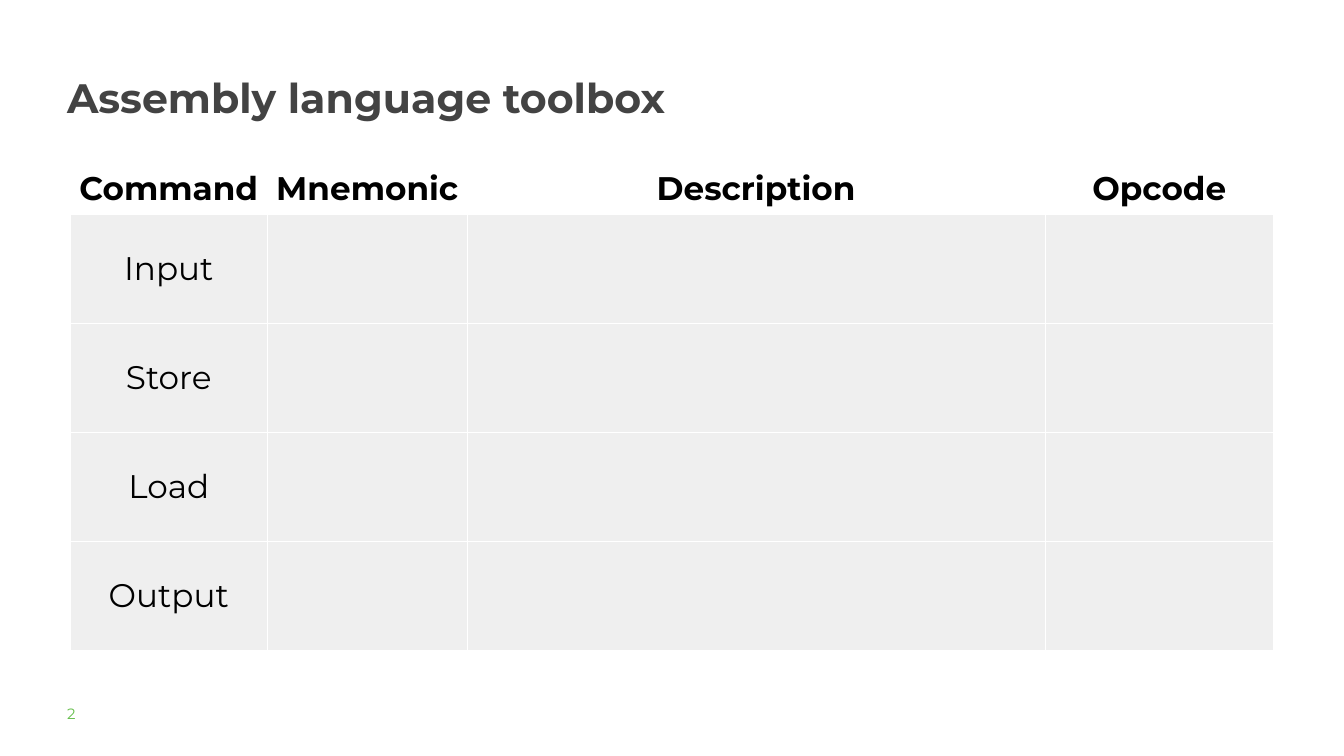
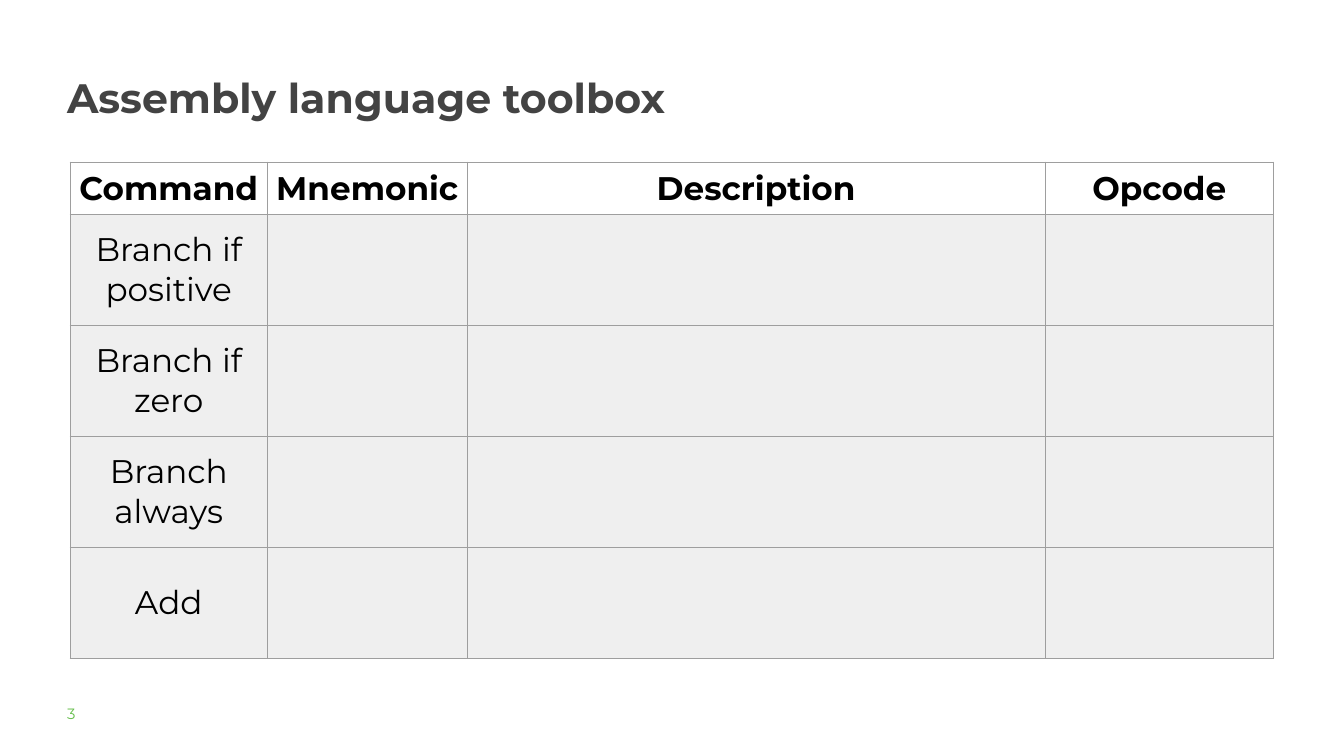
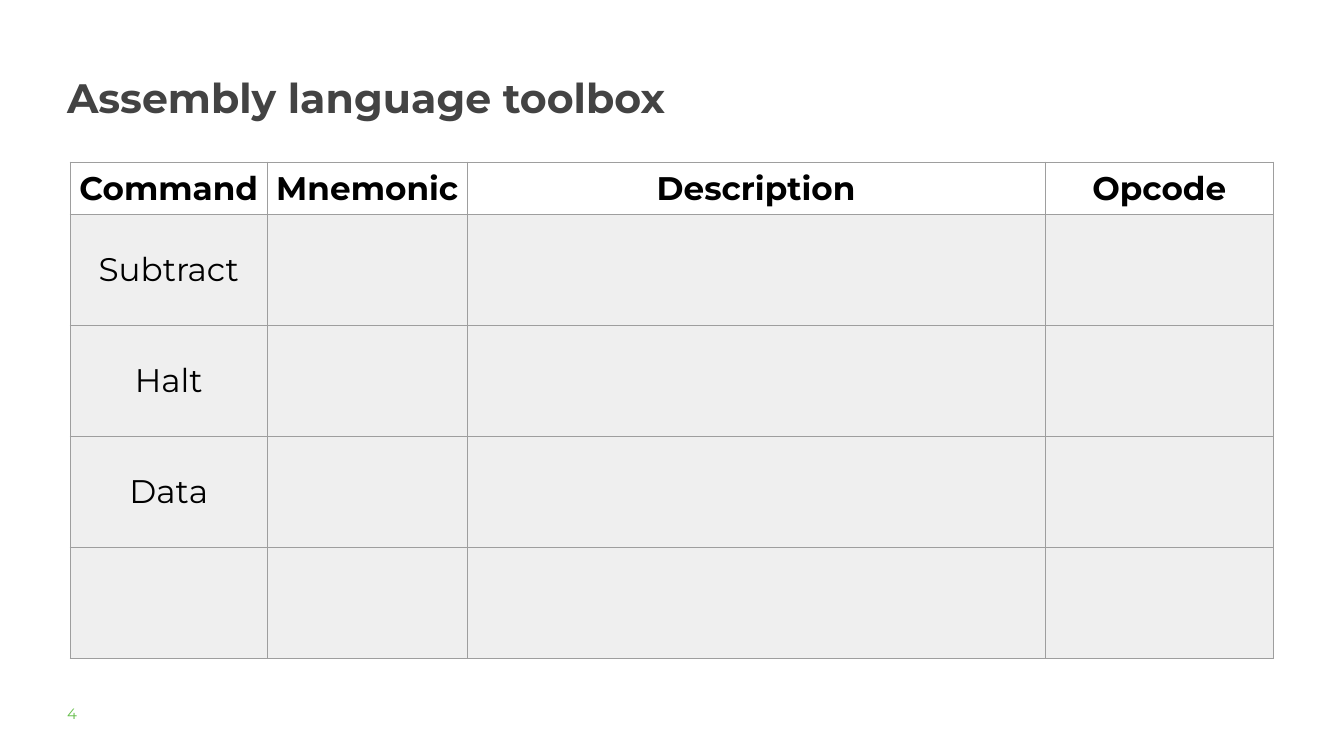
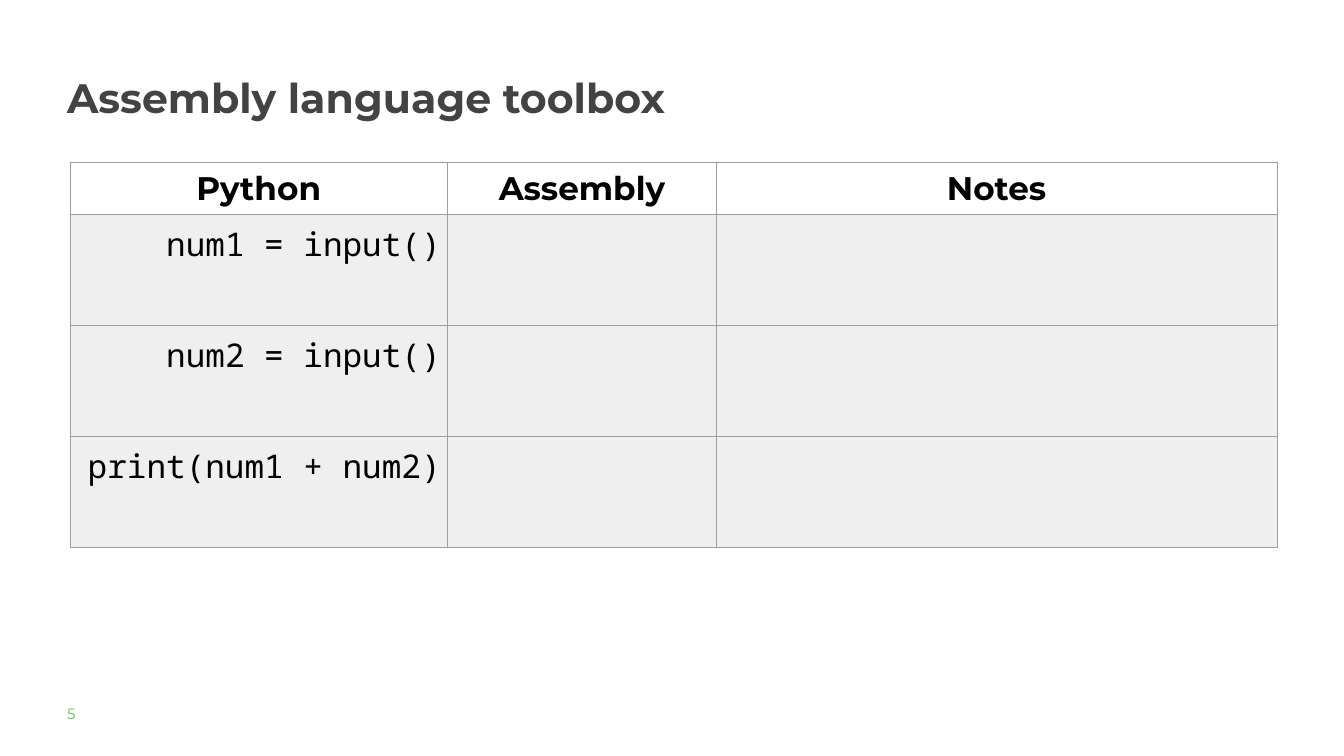
from lxml import etree
from pptx import Presentation
from pptx import util as u
from pptx.dml import color
from pptx.enum import text
from pptx.oxml import ns

COLOURS = {
    "title": "434343",
    "number": "65BE4B",
    "text": "000000",
    "header": "FFFFFF",
    "body": "EFEFEF",
    "light_rule": "FFFFFF",
    "dark_rule": "9E9E9E",
}
SANS, MONO = "Montserrat", "Noto Sans Mono"
TITLE = "Assembly language toolbox"
FIRST_NUMBER = 2

# Table measures
TABLE_LEFT, TABLE_TOP = 75, 173.5
HEADER_HEIGHT = 30
COMMAND_HEADS = ["Command", "Mnemonic", "Description", "Opcode"]
COMMAND_WIDTHS = [211.7, 213.8, 619.2, 244.8]
CODE_HEADS = ["Python", "Assembly", "Notes"]
CODE_WIDTHS = [404.6, 288, 600.5]


class Toolbox:
    """Holds the deck, its style and the current slide."""

    def __init__(self):
        self.deck = Presentation()
        self.deck.slide_width = u.Pt(1440)
        self.deck.slide_height = u.Pt(810)
        self.slide = None

    def add_slide(self):
        self.slide = self.deck.slides.add_slide(self.deck.slide_layouts[6])
        number = len(self.deck.slides) + FIRST_NUMBER - 1
        title = self.label(TITLE, (72, 70, 717, 76), 44, "title", bold=True)
        title.line_spacing = 1.15
        self.label(str(number), (72, 754.5, 113, 28), 16, "number")

    def style(self, para, size, colour, bold=False, font=SANS):
        for span in para.runs:
            span.font.name = font
            span.font.size = u.Pt(size)
            span.font.bold = bold
            span.font.color.rgb = color.RGBColor.from_string(COLOURS[colour])

    def label(self, words, place, size, colour, bold=False):
        box = self.slide.shapes.add_textbox(*map(u.Pt, place))
        frame = box.text_frame
        frame.word_wrap = True
        frame.margin_left = frame.margin_right = 0
        frame.margin_top = frame.margin_bottom = 0
        frame.text = words
        self.style(frame.paragraphs[0], size, colour, bold)
        return frame.paragraphs[0]

    def borders(self, cell, colour):
        properties = cell._tc.get_or_add_tcPr()
        for side in ("a:lnL", "a:lnR", "a:lnT", "a:lnB"):
            line = etree.SubElement(properties, ns.qn(side), w=str(u.Pt(0.75)))
            fill = etree.SubElement(line, ns.qn("a:solidFill"))
            etree.SubElement(fill, ns.qn("a:srgbClr"), val=COLOURS[colour])

    def cell(self, cell, words, header, code, rule):
        self.borders(cell, rule)
        cell.fill.solid()
        fill = COLOURS["header" if header else "body"]
        cell.fill.fore_color.rgb = color.RGBColor.from_string(fill)
        cell.margin_left = cell.margin_right = u.Pt(7.2)
        cell.margin_top = cell.margin_bottom = u.Pt(7.2)
        is_code = code and not header
        cell.vertical_anchor = (
            text.MSO_ANCHOR.TOP if is_code else text.MSO_ANCHOR.MIDDLE)
        if words:
            para = cell.text_frame.paragraphs[0]
            para.text = words
            para.alignment = (
                text.PP_ALIGN.RIGHT if is_code else text.PP_ALIGN.CENTER)
            self.style(para, 35, "text", header, MONO if is_code else SANS)

    def table(self, heads, widths, entries, row_height, rule="dark_rule", code=False):
        """Draws a header row, then rows where only the first cell is filled in."""
        heights = [HEADER_HEIGHT] + [row_height] * len(entries)
        place = (TABLE_LEFT, TABLE_TOP, sum(widths), sum(heights))
        table = self.slide.shapes.add_table(
            len(heights), len(widths), *map(u.Pt, place)).table
        table.first_row = table.horz_banding = False
        for column, width in zip(table.columns, widths):
            column.width = u.Pt(width)
        blanks = [""] * (len(heads) - 1)
        rows = [heads] + [[entry] + blanks for entry in entries]
        for index, (row, height) in enumerate(zip(table.rows, heights)):
            row.height = u.Pt(height)
            for cell, words in zip(row.cells, rows[index]):
                self.cell(cell, words, index == 0, code, rule)


def main():
    toolbox = Toolbox()

    # Input, storage and output commands
    toolbox.add_slide()
    toolbox.table(COMMAND_HEADS, COMMAND_WIDTHS,
                  ["Input", "Store", "Load", "Output"], 116.6, "light_rule")

    # Branching and arithmetic commands
    toolbox.add_slide()
    toolbox.table(COMMAND_HEADS, COMMAND_WIDTHS,
                  ["Branch if positive", "Branch if zero", "Branch always", "Add"],
                  118.8)

    # Remaining commands, with one free row
    toolbox.add_slide()
    toolbox.table(COMMAND_HEADS, COMMAND_WIDTHS,
                  ["Subtract", "Halt", "Data", ""], 118.8)

    # Python next to assembly
    toolbox.add_slide()
    toolbox.table(CODE_HEADS, CODE_WIDTHS,
                  ["num1 = input()", "num2 = input()", "print(num1 + num2)"],
                  118.8, code=True)

    toolbox.deck.save("out.pptx")


if __name__ == "__main__":
    main()
